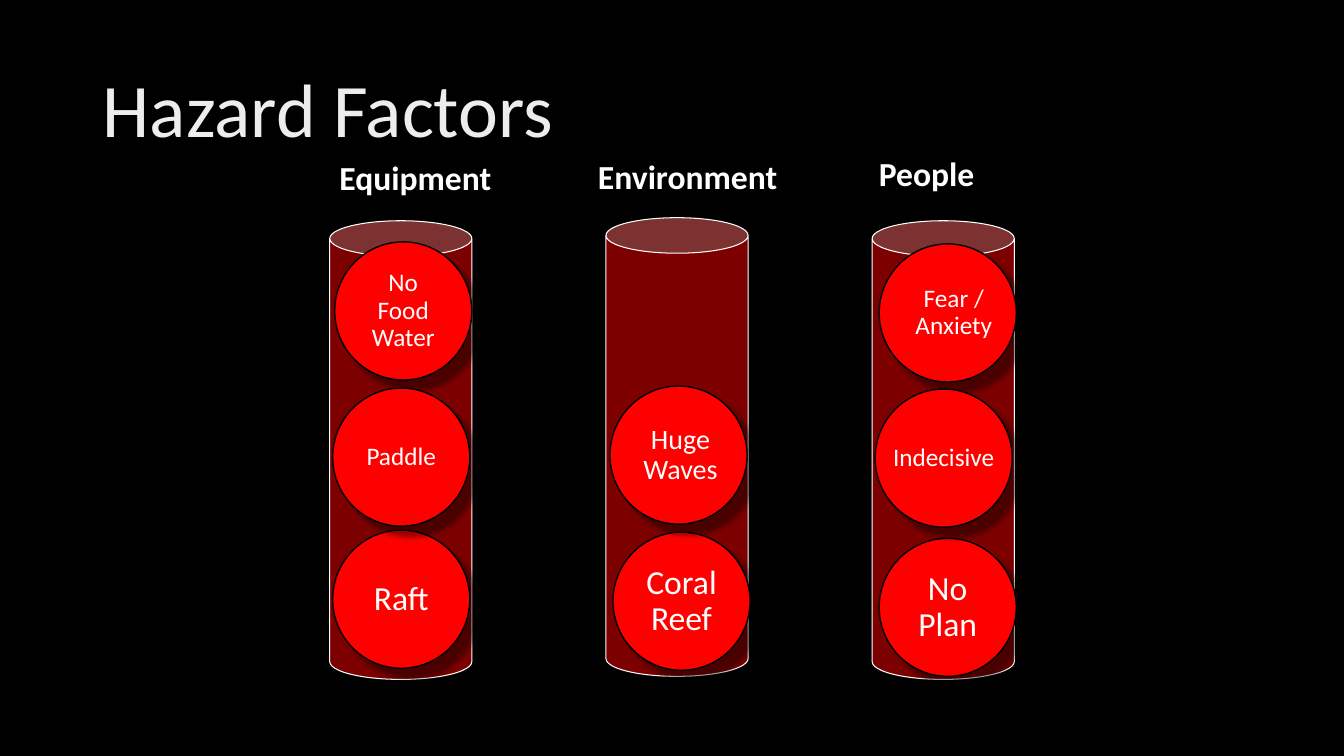
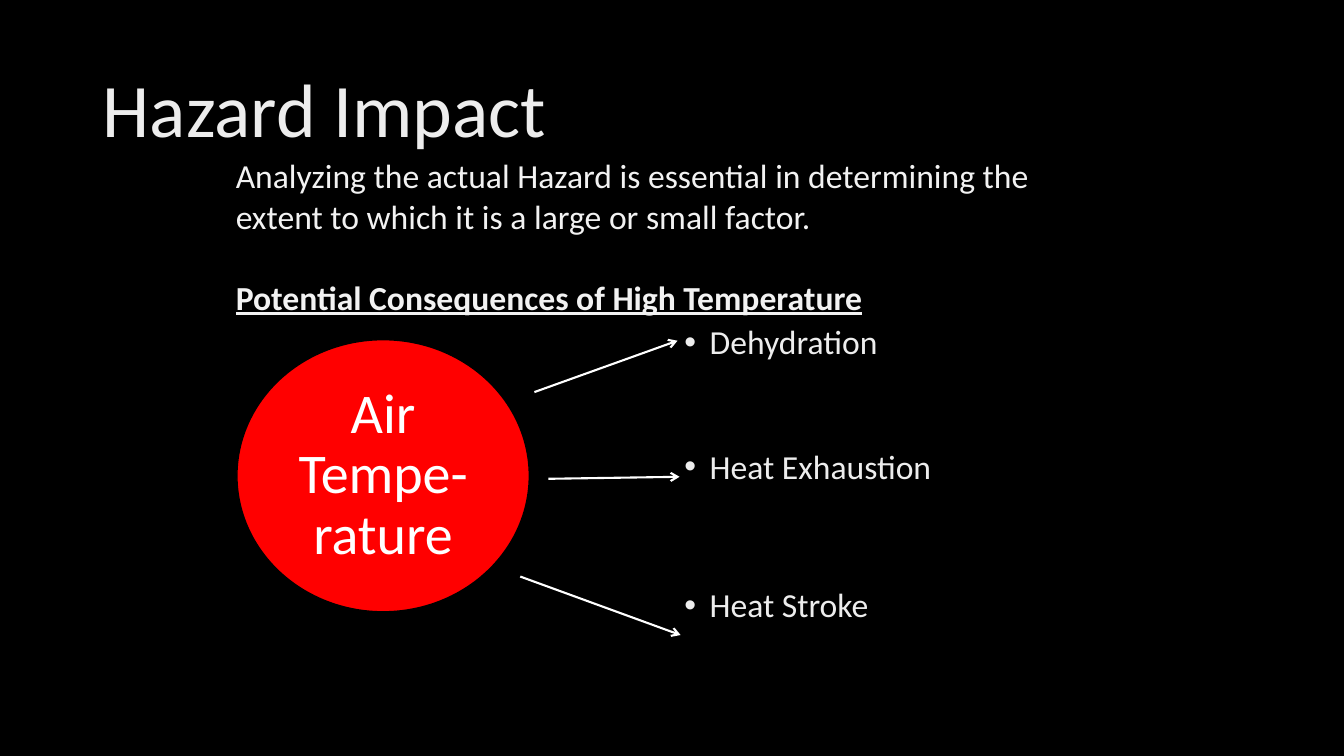
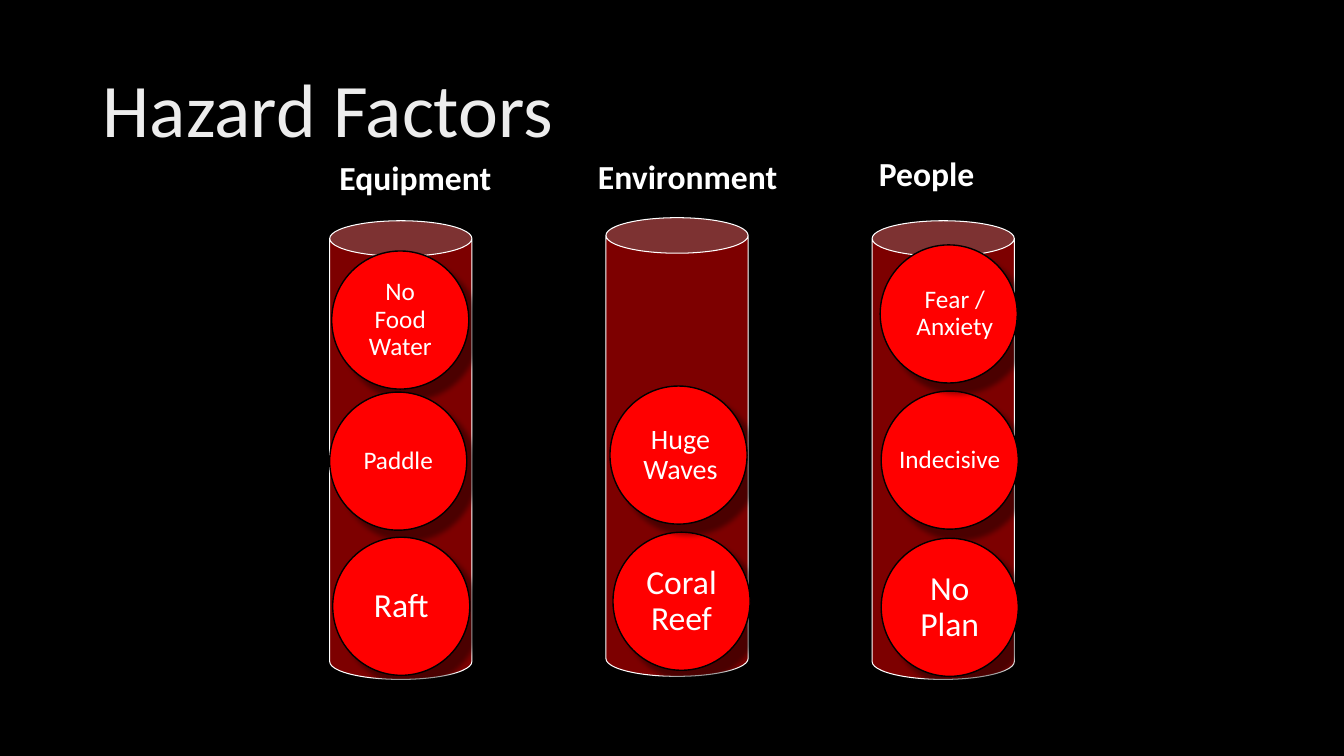
from lxml.etree import SubElement
from pptx import Presentation
from pptx.dml.color import RGBColor
from pptx.enum.shapes import MSO_CONNECTOR, MSO_SHAPE
from pptx.enum.text import MSO_ANCHOR, PP_ALIGN
from pptx.oxml.ns import qn
from pptx.util import Inches, Pt

FONT = "Calibri"
BLACK, WHITE, RED = "000000", "FFFFFF", "FF0000"
TITLE_GREY, TEXT_GREY = "EDEDED", "F2F2F2"
TITLE_ONLY = 5

CAN_SIZE = (1.41, 4.55)
BALL_SIZE = (1.36, 1.37)
COLUMNS = [  # heading, heading position, can position
    ("Equipment", (2.6, 1.51), (3.27, 2.19)),
    ("Environment", (5.3, 1.5), (6.01, 2.16)),
    ("People", (7.67, 1.47), (8.65, 2.19)),
]
BALL_STYLES = {  # text size, sideways shift of the text, wrapping
    "Raft": (24, 0, True),
    "Paddle": (18, 0, True),
    "No Food Water": (18, 0, True),
    "Coral Reef": (24, 0, True),
    "Huge Waves": (20, 0.02, True),
    "No Plan": (24, 0, True),
    "Indecisive": (18, 0, False),
    "Fear / Anxiety": (18, 0.06, True),
}
ENVIRONMENT_BALLS = [("Coral Reef", 6.08, 5.28), ("Huge Waves", 6.05, 3.83)]
FIRST_BALLS = [
    ("Raft", 3.3, 5.26), ("No Food Water", 3.32, 2.4), ("Paddle", 3.3, 3.85),
    *ENVIRONMENT_BALLS,
    ("Fear / Anxiety", 8.72, 2.42), ("No Plan", 8.72, 5.34), ("Indecisive", 8.68, 3.86),
]
SECOND_BALLS = [
    *ENVIRONMENT_BALLS,
    ("No Food Water", 3.29, 2.49), ("Paddle", 3.27, 3.89), ("Raft", 3.3, 5.33),
    ("Indecisive", 8.74, 3.88), ("No Plan", 8.74, 5.34), ("Fear / Anxiety", 8.73, 2.43),
]


def color(value):
    return RGBColor.from_string(value)


def style_paragraph(para, size, hue=WHITE, align=PP_ALIGN.LEFT, spacing=1.0, bold=False):
    para.alignment = align
    para.line_spacing = spacing
    font = para.font
    font.name, font.size, font.bold = FONT, Pt(size), bold
    font.color.rgb = color(hue)


def add_text(slide, place, lines):
    """Add a wrapping text box with one paragraph per line and return its paragraphs."""
    frame = slide.shapes.add_textbox(*map(Inches, place)).text_frame
    frame.word_wrap = True
    frame.text = "\n".join(lines)
    return frame.paragraphs


def add_titled_slide(deck, title):
    slide = deck.slides.add_slide(deck.slide_layouts[TITLE_ONLY])
    box = slide.shapes.title
    box.left, box.top, box.width, box.height = map(Inches, (0.92, 0.4, 11.5, 1.45))
    box.text_frame.text = title
    box.text_frame.vertical_anchor = MSO_ANCHOR.MIDDLE
    style_paragraph(box.text_frame.paragraphs[0], 54, TITLE_GREY, spacing=0.9)
    return slide


def add_outlined_shape(slide, kind, place, line_color, line_width):
    shape = slide.shapes.add_shape(kind, *map(Inches, place))
    shape.shadow.inherit = False
    shape.fill.solid()
    shape.fill.fore_color.rgb = color(RED)
    shape.line.color.rgb = color(line_color)
    shape.line.width = Pt(line_width)
    return shape


def add_can(slide, left, top):
    can = add_outlined_shape(slide, MSO_SHAPE.CAN, (left, top, *CAN_SIZE), WHITE, 0.75)
    fill_color = can.element.spPr.find(qn("a:solidFill")).find(qn("a:srgbClr"))
    SubElement(fill_color, qn("a:alpha"), val="49000")


def add_ball(slide, place, label, size, shift=0, wrap=True):
    """Add a red circle with a soft shadow and a label moved sideways by shift."""
    ball = add_outlined_shape(slide, MSO_SHAPE.OVAL, place, BLACK, 1)
    effects = ball.element.spPr.find(qn("a:effectLst"))
    shadow = SubElement(effects, qn("a:outerShdw"), blurRad=str(Pt(4)), dist=str(Pt(10)),
                        dir=str(45 * 60000), algn="tl", rotWithShape="0")
    shadow_color = SubElement(shadow, qn("a:srgbClr"), val=BLACK)
    SubElement(shadow_color, qn("a:alpha"), val="40000")
    frame = ball.text_frame
    frame.margin_left, frame.margin_right = Inches(0.07 + shift), Inches(0.07 - shift)
    frame.margin_top = frame.margin_bottom = Inches(0.07)
    frame.vertical_anchor = MSO_ANCHOR.MIDDLE
    frame.word_wrap = wrap
    frame.text = label
    style_paragraph(frame.paragraphs[0], size, align=PP_ALIGN.CENTER, spacing=0.9)


def add_arrow(slide, *ends):
    arrow = slide.shapes.add_connector(MSO_CONNECTOR.STRAIGHT, *map(Inches, ends))
    arrow.line.color.rgb = color(WHITE)
    arrow.line.width = Pt(1.5)
    properties = arrow.element.spPr
    SubElement(properties.find(qn("a:ln")), qn("a:tailEnd"), type="arrow")
    SubElement(properties, qn("a:effectLst"))


def add_bullet(para):
    properties = para._p.get_or_add_pPr()
    properties.set("marL", str(Inches(0.25)))
    properties.set("indent", str(Inches(-0.25)))
    SubElement(properties, qn("a:buFont"), typeface="Arial")
    SubElement(properties, qn("a:buChar"), char="•")


def build_factors(deck, balls):
    slide = add_titled_slide(deck, "Hazard Factors")
    for heading, heading_position, can_position in COLUMNS:
        para, = add_text(slide, (*heading_position, 3.04, 0.5), [heading])
        style_paragraph(para, 24, align=PP_ALIGN.CENTER, bold=True)
        add_can(slide, *can_position)
    for label, left, top in balls:
        add_ball(slide, (left, top, *BALL_SIZE), label, *BALL_STYLES[label])


def build_impact(deck):
    slide = add_titled_slide(deck, "Hazard Impact")
    consequences = add_text(slide, (6.69, 3.18, 4.51, 3.95),
                            ["Dehydration", "Heat Exhaustion", "Heat Stroke"])
    for para, gap in zip(consequences, (0, 63, 73)):
        para.space_before = Pt(gap)
        add_bullet(para)
        style_paragraph(para, 24, TITLE_GREY, spacing=0.9)

    add_ball(slide, (2.35, 3.37, 2.9, 2.7), "Air Tempe-rature", 40)
    add_arrow(slide, 5.3, 3.89, 6.72, 3.38)
    add_arrow(slide, 5.44, 4.75, 6.74, 4.73)
    add_arrow(slide, 5.16, 5.72, 6.75, 6.3)

    intro, heading = add_text(slide, (2.24, 1.49, 8.52, 1.72), [
        "Analyzing the actual Hazard is essential in determining the extent "
        "to which it is a large or small factor.",
        "Potential Consequences of High Temperature",
    ])
    style_paragraph(intro, 24, TEXT_GREY)
    style_paragraph(heading, 24, TEXT_GREY, bold=True)
    heading.font.underline = True
    heading.space_before = Pt(29)


def main():
    deck = Presentation()
    deck.slide_width, deck.slide_height = Inches(13.33), Inches(7.5)
    background = deck.slide_master.background.fill
    background.solid()
    background.fore_color.rgb = color(BLACK)
    build_factors(deck, FIRST_BALLS)
    build_impact(deck)
    build_factors(deck, SECOND_BALLS)
    deck.save("out.pptx")


if __name__ == "__main__":
    main()
